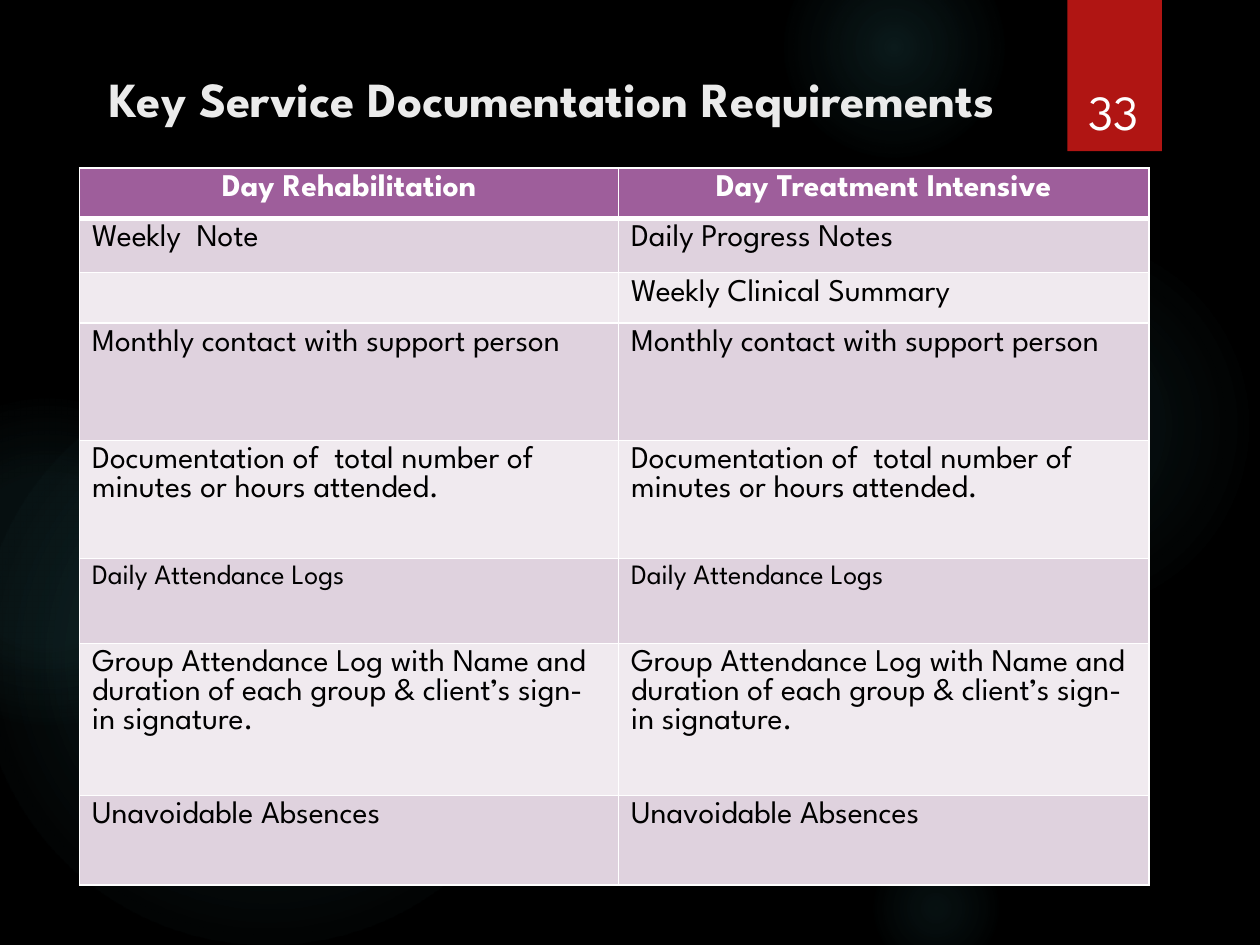
from lxml.etree import SubElement as Sub
from pptx import Presentation
from pptx.dml.color import RGBColor
from pptx.enum.shapes import MSO_SHAPE as Kind
from pptx.enum.text import MSO_ANCHOR as Anchor, PP_ALIGN as Align
from pptx.oxml.ns import qn
from pptx.util import Pt


def paint(fill, tone):
    fill.solid()
    fill.fore_color.rgb = RGBColor.from_string(tone)


def write(frame, text, size=18, tone="000000", bold=False, align=Align.LEFT):
    par = frame.paragraphs[0]
    par.alignment = align
    par.font.size = Pt(size)
    if text:
        run = par.add_run()
        run.text = text
        run.font.name = "League Spartan"
        run.font.size = Pt(size)
        run.font.bold = bold
        run.font.color.rgb = RGBColor.from_string(tone)


deck = Presentation()
deck.slide_width, deck.slide_height = Pt(720), Pt(540)
slide = deck.slides.add_slide(deck.slide_layouts[6])
paint(slide.background.fill, "000000")

# Soft glows: left, top, diameter, then (stop, opacity) in percent
glows = [
    (496, 132, 222, [(0, 7), (36, 6), (69, 0)]),
    (448, -36, 126, [(0, 14), (36, 7), (73, 0)]),
    (496, 480, 78, [(0, 9), (36, 5), (66, 0)]),
    (-12, 210, 330, [(0, 11), (36, 10), (75, 0)]),
    (-66, 228, 186, [(0, 8), (36, 8), (72, 0)]),
]
for left, top, size, stops in glows:
    glow = slide.shapes.add_shape(Kind.OVAL, Pt(left), Pt(top), Pt(size), Pt(size))
    glow.shadow.inherit = False
    glow.line.fill.background()
    glow.fill.gradient()
    grad = glow.fill._fill._gradFill
    for kid in list(grad):
        grad.remove(kid)
    group = Sub(grad, qn("a:gsLst"))
    for pos, alpha in stops:
        stop = Sub(group, qn("a:gs"), pos=str(pos * 1000))
        hue = Sub(stop, qn("a:srgbClr"), val="50B9C1")
        Sub(hue, qn("a:alpha"), val=str(alpha * 1000))
    ring = Sub(grad, qn("a:path"), {"path": "circle"})
    Sub(ring, qn("a:fillToRect"), {side: "50000" for side in "ltrb"})

# Red page tab
tab = slide.shapes.add_shape(Kind.RECTANGLE, Pt(610), Pt(0), Pt(54), Pt(86.4))
tab.shadow.inherit = False
tab.line.fill.background()
paint(tab.fill, "B01513")

# Title
title = slide.shapes.add_textbox(Pt(19.5), Pt(29), Pt(592), Pt(67)).text_frame
title.word_wrap = True
title.margin_top = Pt(10)
write(title, "Key Service Documentation Requirements", size=28, tone="EBEBEB",
      bold=True, align=Align.CENTER)

# Table
contact = "Monthly contact with support person"
total = "Documentation of  total number of minutes or hours attended."
daily = "Daily Attendance Logs"
group = "Group Attendance Log with Name and duration of each group & client’s sign-in signature."
away = "Unavoidable Absences"
rows = [  # height, left text, right text
    (26.5, "Day Rehabilitation", "Day Treatment Intensive"),
    (31, "Weekly  Note", "Daily Progress Notes"),
    (27.5, "", "Weekly Clinical Summary"),
    (67, contact, contact),
    (67.5, total, total),
    (48.5, daily, daily),
    (87, group, group),
    (51, away, away),
]
grid = slide.shapes.add_table(len(rows), 2, Pt(45.5), Pt(96), Pt(611), Pt(406)).table
grid.columns[0].width, grid.columns[1].width = Pt(308), Pt(303)
for i, (height, *texts) in enumerate(rows):
    grid.rows[i].height = Pt(height)
    head = i == 0
    for j, text in enumerate(texts):
        cell = grid.cell(i, j)
        if head:
            write(cell.text_frame, text, tone="FFFFFF", bold=True, align=Align.CENTER)
        else:
            write(cell.text_frame, text, size=16 if text == daily else 18)
        # White borders, thicker under the header; they precede the fill
        props = cell._tc.get_or_add_tcPr()
        for side in "LRTB":
            thick = (head and side == "B") or (i == 1 and side == "T")
            edge = Sub(props, qn("a:ln" + side), w=str(Pt(3 if thick else 1)))
            Sub(Sub(edge, qn("a:solidFill")), qn("a:srgbClr"), val="FFFFFF")
        paint(cell.fill, "9E5E9B" if head else "DFD2DE" if i % 2 else "F0EAEF")

# Page number
page = slide.shapes.add_textbox(Pt(611.5), Pt(23), Pt(49.5), Pt(60.5)).text_frame
page.word_wrap = True
page.vertical_anchor = Anchor.BOTTOM
write(page, "33", size=28, tone="FFFFFF", align=Align.CENTER)

deck.save("out.pptx")
